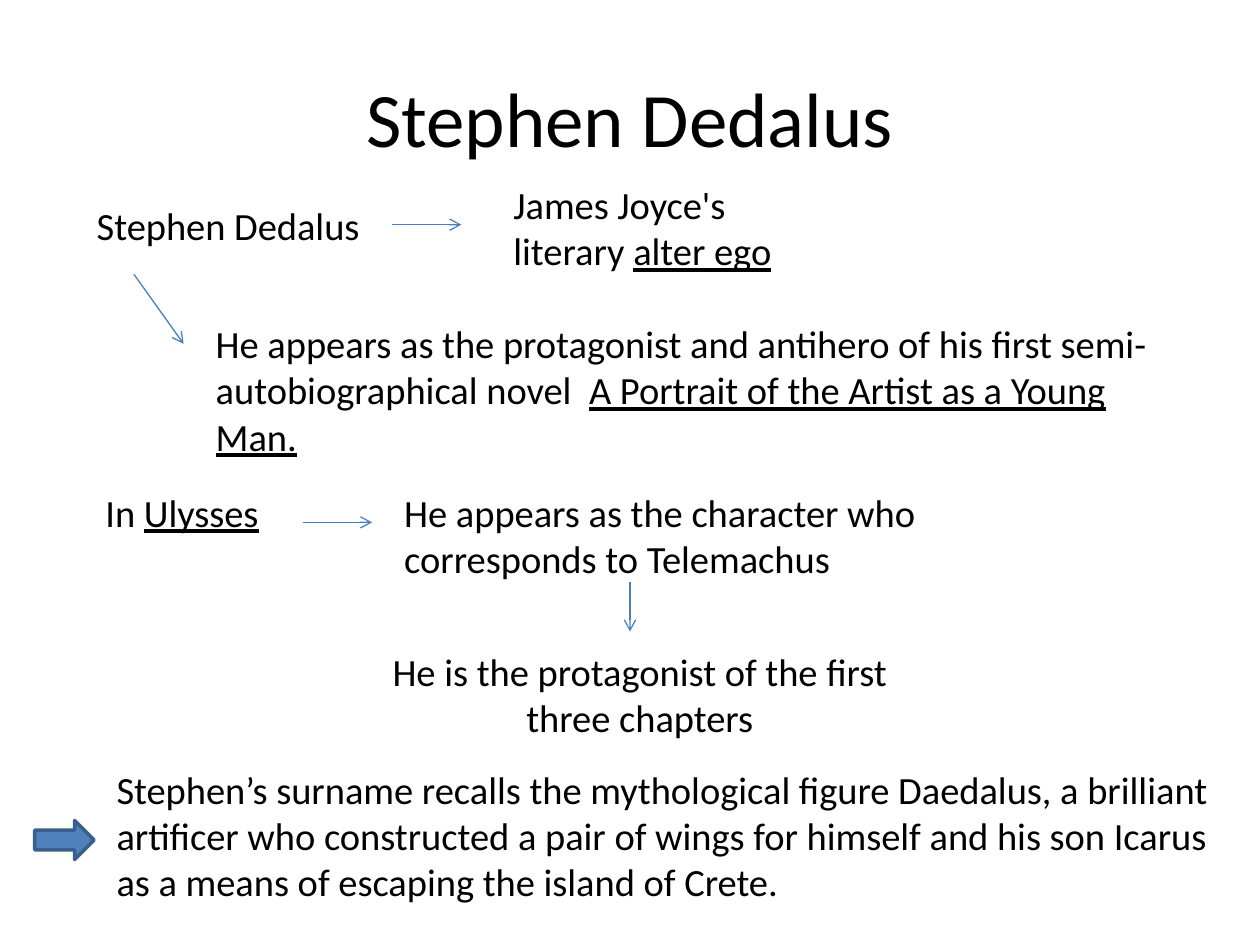
from collections import namedtuple

from lxml.etree import SubElement
from pptx import Presentation
from pptx.dml.color import RGBColor
from pptx.enum.shapes import MSO_CONNECTOR as Connector, MSO_SHAPE as Shape
from pptx.enum.text import MSO_ANCHOR as Anchor, PP_ALIGN as Align
from pptx.oxml.ns import qn
from pptx.util import Cm, Pt

BLACK, BLUE, LINE_BLUE, DARK_BLUE = "000000", "4F81BD", "4B7EBC", "3A5F8C"

Box = namedtuple("Box", "left top width height")


def color(hex_string):
    return RGBColor.from_string(hex_string)


def inner(box, left, top, width, height):
    return Box(box.left + left, box.top + top, width, height)


def add_text(page, box, plain, underlined="", size=22, align=Align.LEFT, anchor=Anchor.TOP):
    frame = page.shapes.add_textbox(*map(Cm, box)).text_frame
    frame.word_wrap = True
    frame.vertical_anchor = anchor
    para = frame.paragraphs[0]
    para.alignment = align
    para.font.name = "Calibri"
    para.font.size = Pt(size)
    para.font.color.rgb = color(BLACK)
    para.add_run().text = plain
    if underlined:
        span = para.add_run()
        span.text = underlined
        span.font.underline = True


def add_arrow(page, box):
    ends = box.left, box.top, box.left + box.width, box.top + box.height
    arrow = page.shapes.add_connector(Connector.STRAIGHT, *map(Cm, ends))
    arrow.line.color.rgb = color(LINE_BLUE)
    arrow.line.width = Pt(0.75)
    SubElement(arrow.line._get_or_add_ln(), qn("a:tailEnd"), type="arrow")
    SubElement(arrow._element.spPr, qn("a:effectLst"))


def add_title(page, box):
    add_text(page, box, "Stephen Dedalus", size=44, align=Align.CENTER, anchor=Anchor.MIDDLE)


def add_origin(page, box):
    add_text(page, inner(box, 0, 0.41, 8.4, 1.2), "Stephen Dedalus")
    add_arrow(page, inner(box, 6.2, 1, 1.4, 0))
    add_text(page, inner(box, 8.4, 0, 6, 2.13), "James Joyce's literary ", "alter ego")
    add_arrow(page, inner(box, 1, 2, 1, 1.4))
    add_text(
        page,
        inner(box, 2.4, 2.8, box.width - 2.4, 3.18),
        "He appears as the protagonist and antihero of his first "
        "semi-autobiographical novel  ",
        "A Portrait of the Artist as a Young Man.",
    )


def add_ulysses(page, box):
    add_text(page, inner(box, 0, 0, 8.2, 1.2), " In ", "Ulysses")
    add_arrow(page, inner(box, 4.4, 0.8, 1.4, 0))
    add_text(
        page,
        inner(box, 6.2, 0, box.width - 6.2, 2.13),
        "He appears as the character who corresponds to Telemachus",
    )
    add_arrow(page, inner(box, 11, 2, 0, 1))
    add_text(
        page,
        inner(box, 5.8, 3.2, 10.8, 2.13),
        "He is the protagonist of the first three chapters",
        align=Align.CENTER,
    )


def add_surname(page, box):
    marker = page.shapes.add_shape(Shape.RIGHT_ARROW, *map(Cm, inner(box, 0, 1.22, 1.2, 0.79)))
    marker.shadow.inherit = False
    marker.fill.solid()
    marker.fill.fore_color.rgb = color(BLUE)
    marker.line.color.rgb = color(DARK_BLUE)
    marker.line.width = Pt(2)
    add_text(
        page,
        inner(box, 1.4, 0, box.width - 1.4, box.height),
        "Stephen’s surname recalls the mythological figure Daedalus, a brilliant "
        "artificer who constructed a pair of wings for himself and his "
        "son Icarus as a means of escaping the island of Crete.",
    )


def main():
    deck = Presentation()
    deck.slide_width, deck.slide_height = Cm(25.4), Cm(19.05)
    page = deck.slides.add_slide(deck.slide_layouts[6])
    add_title(page, Box(1.27, 0.76, 22.86, 3.18))
    add_origin(page, Box(1.7, 3.53, 22, 5.98))
    add_ulysses(page, Box(1.7, 9.73, 18.6, 5.33))
    add_surname(page, Box(0.7, 15.32, 24.1, 3.07))
    deck.save("out.pptx")


if __name__ == "__main__":
    main()
